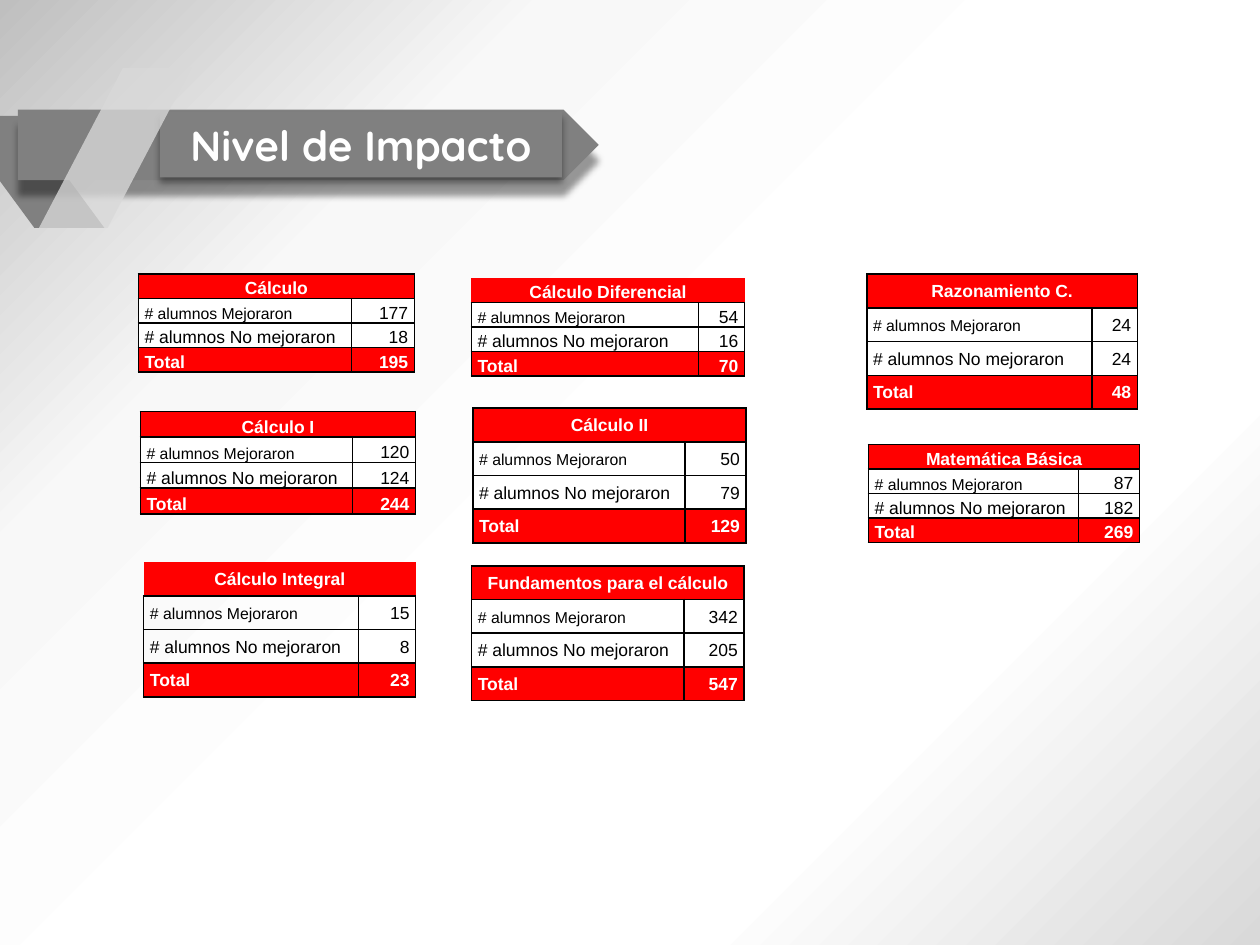
from lxml import etree
from pptx import Presentation
from pptx.dml.color import RGBColor
from pptx.enum.shapes import MSO_SHAPE
from pptx.enum.text import MSO_ANCHOR, MSO_AUTO_SIZE, PP_ALIGN
from pptx.oxml import parse_xml
from pptx.oxml.ns import qn
from pptx.util import Pt

PARALLELOGRAM, ARROW = MSO_SHAPE.PARALLELOGRAM, MSO_SHAPE.PENTAGON
LEFT, CENTER, RIGHT = PP_ALIGN.LEFT, PP_ALIGN.CENTER, PP_ALIGN.RIGHT
BOTTOM, MIDDLE = MSO_ANCHOR.BOTTOM, MSO_ANCHOR.MIDDLE
NO_FIT = MSO_AUTO_SIZE.NONE
NAMESPACE = 'xmlns:a="http://schemas.openxmlformats.org/drawingml/2006/main"'
RED, GRAY, WHITE, BLACK = "FF0000", "808080", "FFFFFF", "000000"

BACKGROUND_STOPS = [(0, "D9D9D9"), (24, "FCFCFC"), (50, "FFFFFF"),
                    (75, "F8F8F8"), (100, "BFBFBF")]

# Course, left, top, column widths, row height, improved, not improved, open top
COURSES = [
    ("Cálculo Diferencial", 269.3, 159, (129.9, 26.3), 14, 54, 16, True),
    ("Cálculo", 79, 156.7, (121.8, 36), 14, 177, 18, False),
    ("Cálculo I", 80.2, 235.2, (121.3, 36), 14.6, 120, 124, False),
    ("Cálculo II", 270.2, 233.2, (121.2, 35), 19.25, 50, 79, False),
    ("Cálculo Integral", 82.1, 321.2, (122.8, 32.7), 19.25, 15, 8, True),
    ("Fundamentos para el cálculo", 269.5, 323.3, (121.3, 34.4), 19.25, 342, 205, False),
    ("Matemática Básica", 496.2, 254, (120, 35), 14, 87, 182, False),
    ("Razonamiento C.", 495.3, 156.7, (128.6, 26.1), 19.25, 24, 24, False),
]


def color(value):
    return RGBColor.from_string(value)


def paint_background(page):
    page.background.fill.solid()
    properties = page.background._cSld.bg.bgPr
    stops = "".join(
        f'<a:gs pos="{spot * 1000}"><a:srgbClr val="{value}"/></a:gs>'
        for spot, value in BACKGROUND_STOPS)
    gradient = parse_xml(
        f'<a:gradFill {NAMESPACE} rotWithShape="1"><a:gsLst>{stops}</a:gsLst>'
        '<a:path path="circle"><a:fillToRect l="100000" t="100000"/></a:path>'
        '</a:gradFill>')
    properties.replace(properties[0], gradient)


def add_span(para, text, font, size, value, bold):
    span = para.add_run()
    span.text = text
    span.font.name = font
    span.font.size = Pt(size)
    span.font.bold = bold
    span.font.color.rgb = color(value)


def add_shadow(shape, distance):
    shape.shadow.inherit = False
    effects = shape._element.spPr.find(qn("a:effectLst"))
    effects.append(parse_xml(
        f'<a:outerShdw {NAMESPACE} blurRad="{Pt(4)}" dist="{Pt(distance)}" '
        'dir="5400000" rotWithShape="0"><a:srgbClr val="000000">'
        '<a:alpha val="40000"/></a:srgbClr></a:outerShdw>'))


def add_ribbon(page, kind, place, fill, adjust, flips, alpha=None):
    shape = page.shapes.add_shape(kind, *map(Pt, place))
    shape.shadow.inherit = False
    shape.adjustments[0] = adjust
    shape.fill.solid()
    shape.fill.fore_color.rgb = color(fill)
    shape.line.fill.background()
    for flip in flips:
        shape._element.spPr.xfrm.set(flip, "1")
    if alpha:
        tint = shape._element.spPr.find(".//" + qn("a:srgbClr"))
        etree.SubElement(tint, qn("a:alpha")).set("val", str(alpha * 1000))
    return shape


def format_title(page):
    title = page.shapes.title
    title.left, title.top, title.width, title.height = map(Pt, (91.4, 64, 229.7, 37.4))
    title.fill.solid()
    title.fill.fore_color.rgb = color(GRAY)
    add_shadow(title, 3)
    frame = title.text_frame
    frame.auto_size = NO_FIT
    frame.word_wrap = True
    frame.vertical_anchor = MIDDLE
    frame.margin_left = frame.margin_right = Pt(5)
    frame.margin_top = frame.margin_bottom = Pt(3)
    para = frame.paragraphs[0]
    para.alignment = CENTER
    add_span(para, "Nivel de Impacto", "Quicksand", 24, WHITE, True)
    # Bring the title above the ribbon already drawn
    page.shapes._spTree.append(title._element)


def add_borders(cell, hidden):
    properties = cell._tc.get_or_add_tcPr()
    for index, side in enumerate("LRTB"):
        paint = ("<a:noFill/>" if side in hidden else
                 f'<a:solidFill><a:srgbClr val="{BLACK}"/></a:solidFill>')
        properties.insert(index, parse_xml(
            f'<a:ln{side} {NAMESPACE} w="{Pt(1)}">{paint}</a:ln{side}>'))


def fill_cell(cell, text, align, size, strong, padded, hidden=""):
    if strong or not padded:
        cell.fill.solid()
        cell.fill.fore_color.rgb = color(RED if strong else WHITE)
    else:
        cell.fill.background()
    add_borders(cell, hidden)
    cell.vertical_anchor = BOTTOM
    cell.margin_left = cell.margin_right = Pt(3.6)
    cell.margin_top = cell.margin_bottom = Pt(3.6 if padded else 0)
    para = cell.text_frame.paragraphs[0]
    para.alignment = align
    if text:
        add_span(para, text, "Arial", size, WHITE if strong else BLACK, strong)


def add_course(page, name, left, top, widths, row_height, better, same, open_top):
    frame = page.shapes.add_table(4, 2, Pt(left), Pt(top),
                                  Pt(sum(widths)), Pt(4 * row_height))
    table = frame.table
    table.first_row = table.horz_banding = False
    for column, width in zip(table.columns, widths):
        column.width = Pt(width)
    for row in table.rows:
        row.height = Pt(row_height)
    padded = row_height > 15

    # Heading across both columns
    table.cell(0, 0).merge(table.cell(0, 1))
    hidden = "LRT" if open_top else ""
    for column, text in enumerate((name, "")):
        fill_cell(table.cell(0, column), text, CENTER, 10, True, padded, hidden)

    # Counts and total
    rows = [("# alumnos Mejoraron", better, 9, False),
            ("# alumnos No mejoraron", same, 10, False),
            ("Total", better + same, 10, True)]
    for index, (label, count, size, strong) in enumerate(rows, 1):
        fill_cell(table.cell(index, 0), label, LEFT, size, strong, padded)
        fill_cell(table.cell(index, 1), str(count), RIGHT, 10, strong, padded)


def main():
    deck = Presentation()
    deck.slide_width, deck.slide_height = Pt(720), Pt(540)
    page = deck.slides.add_slide(deck.slide_layouts[5])
    paint_background(page)

    for course in COURSES:
        add_course(page, *course)

    # Folded ribbon behind and over the title
    add_ribbon(page, PARALLELOGRAM, (-27.4, 66.2, 87.1, 64.1), GRAY, 0.735, ["flipH"])
    band = add_ribbon(page, ARROW, (10.2, 62.6, 331.9, 40.3), GRAY, 0.5, ["flipH"])
    band.rotation = 180
    add_shadow(band, 9)
    format_title(page)
    add_ribbon(page, PARALLELOGRAM, (22.3, 38.9, 87.1, 91.4), "D9D9D9", 0.55,
               ["flipH", "flipV"], alpha=78)

    deck.save("out.pptx")


if __name__ == "__main__":
    main()
